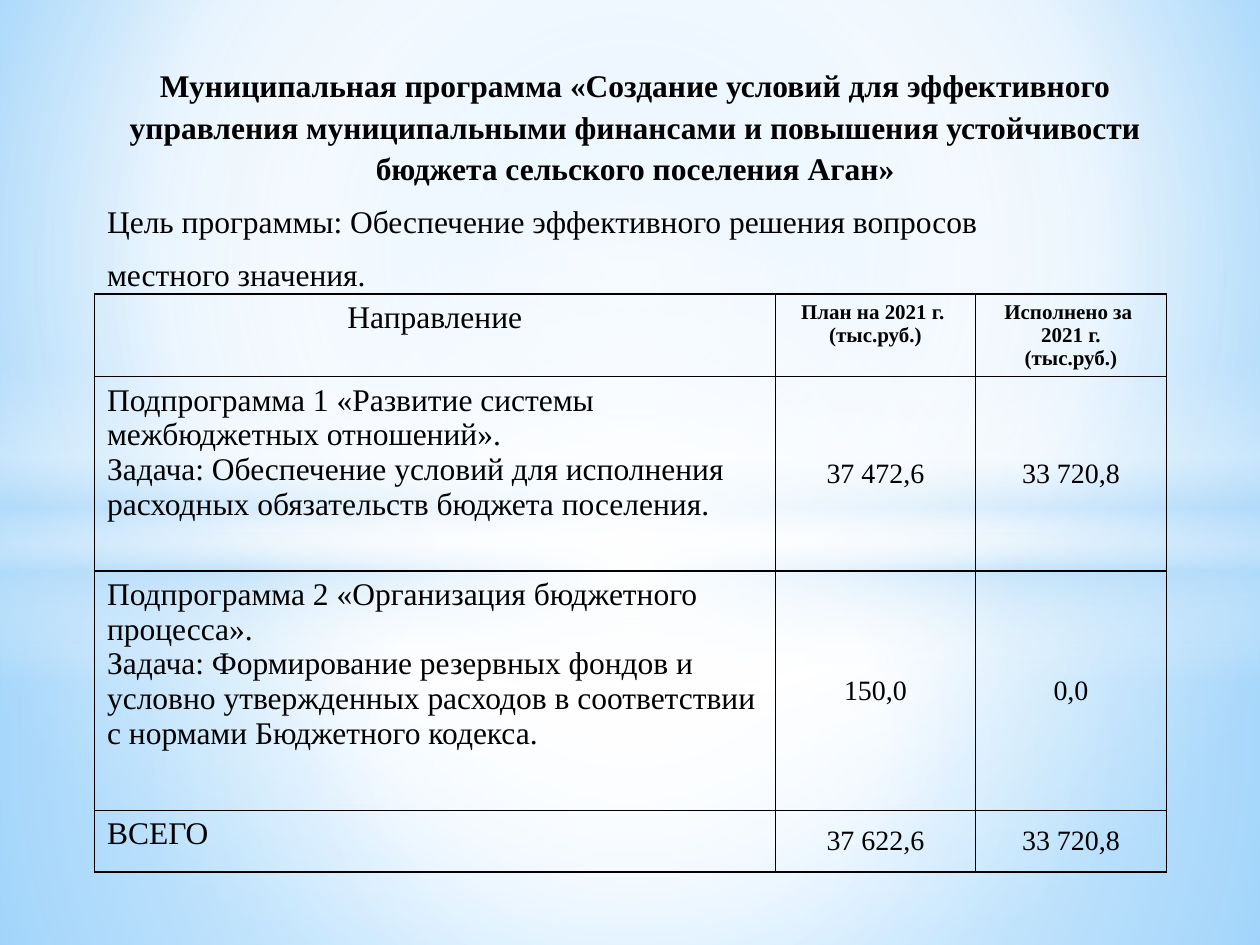
from lxml import etree
from pptx import Presentation
from pptx.dml.color import RGBColor
from pptx.enum.shapes import MSO_SHAPE
from pptx.enum.text import MSO_ANCHOR, MSO_AUTO_SIZE, PP_ALIGN
from pptx.oxml.ns import qn
from pptx.util import Pt

RECTANGLE, OVAL = MSO_SHAPE.RECTANGLE, MSO_SHAPE.OVAL
TOP, MIDDLE = MSO_ANCHOR.TOP, MSO_ANCHOR.MIDDLE
LEFT, CENTER = PP_ALIGN.LEFT, PP_ALIGN.CENTER
NO_AUTOFIT = MSO_AUTO_SIZE.NONE
TITLE_ONLY = 5

COLORS = {
    "text": "000000",
    "border": "000000",
    "white": "FFFFFF",
    "haze": "B4DCFA",
    "sky": "9ED5FF",
    "deep_sky": "5BB9FF",
}
CENTERED = (50, 50, 50, 50)

HEADING = ("Муниципальная программа «Создание условий для эффективного управления "
           "муниципальными финансами и повышения устойчивости бюджета сельского поселения Аган»")
GOAL = ["Цель программы: Обеспечение эффективного решения вопросов", "местного значения."]

COLUMN_WIDTHS = [389, 114.5, 109]
ROW_HEIGHTS = [47, 111, 137, 35]
ROWS = [
    [["Направление"],
     ["План на 2021 г. ", "(тыс.руб.)"],
     ["Исполнено за ", "2021 г.", "(тыс.руб.)"]],
    [["Подпрограмма 1 «Развитие системы межбюджетных отношений».",
      "Задача: Обеспечение условий для исполнения расходных обязательств бюджета поселения."],
     ["37 472,6"], ["33 720,8"]],
    [["Подпрограмма 2 «Организация бюджетного процесса».",
      "Задача: Формирование резервных фондов и условно утвержденных расходов "
      "в соответствии с нормами Бюджетного кодекса."],
     ["150,0"], ["0,0"]],
    [["ВСЕГО"], ["37 622,6"], ["33 720,8"]],
]


class SlideBuilder:
    font = "Times New Roman"

    def __init__(self, page):
        self.page = page

    def gradient(self, owner, stops, center=None):
        """Swap the solid fill of owner for a circular or vertical gradient."""
        solid = owner.find(qn("a:solidFill"))
        grad = etree.Element(qn("a:gradFill"), rotWithShape="1")
        stop_list = etree.SubElement(grad, qn("a:gsLst"))
        for position, color, opacity in stops:
            stop = etree.SubElement(stop_list, qn("a:gs"), pos=str(position * 1000))
            tint = etree.SubElement(stop, qn("a:srgbClr"), val=COLORS[color])
            if opacity < 100:
                etree.SubElement(tint, qn("a:alpha"), val=str(opacity * 1000))
        if center:
            circle = etree.SubElement(grad, qn("a:path"), path="circle")
            sides = {side: str(value * 1000) for side, value in zip("ltrb", center)}
            etree.SubElement(circle, qn("a:fillToRect"), sides)
        else:
            etree.SubElement(grad, qn("a:lin"), ang="5400000", scaled="0")
        owner.replace(solid, grad)

    def background(self, stops, center):
        self.page.background.fill.solid()
        self.gradient(self.page.element.find(".//" + qn("p:bgPr")), stops, center)

    def glow(self, kind, top, height, stops, center=None):
        """Add a full-width translucent shape."""
        shape = self.page.shapes.add_shape(kind, 0, Pt(top), Pt(720), Pt(height))
        shape.shadow.inherit = False
        shape.line.fill.background()
        shape.fill.solid()
        self.gradient(shape.element.spPr, stops, center)

    def add_lines(self, frame, lines, size, bold=False, **para_format):
        """Add one paragraph per line, starting with the first empty one."""
        for line in lines:
            para = frame.paragraphs[-1]
            if para.runs:
                para = frame.add_paragraph()
            for name, value in para_format.items():
                setattr(para, name, value)
            span = para.add_run()
            span.text = line
            for name, value in {"name": self.font, "size": Pt(size), "bold": bold}.items():
                setattr(span.font, name, value)
            span.font.color.rgb = RGBColor.from_string(COLORS["text"])

    def title(self, left, top, width, height, heading, details):
        box = self.page.shapes.title
        place = {"left": left, "top": top, "width": width, "height": height}
        for name, value in place.items():
            setattr(box, name, Pt(value))
        frame = box.text_frame
        frame_format = {"word_wrap": True, "auto_size": NO_AUTOFIT, "vertical_anchor": TOP}
        for name, value in frame_format.items():
            setattr(frame, name, value)
        spacing = {"space_before": Pt(3.6), "space_after": Pt(3), "line_spacing": 1.1}
        self.add_lines(frame, [heading], 18, bold=True, alignment=CENTER, **spacing)
        self.add_lines(frame, details, 18, alignment=LEFT, **spacing)
        # Bring the title in front of the glows
        box.element.getparent().append(box.element)

    def border(self, cell):
        properties = cell._tc.get_or_add_tcPr()
        for index, side in enumerate(("lnL", "lnR", "lnT", "lnB")):
            line = etree.Element(qn("a:" + side), w=str(Pt(1)))
            fill = etree.SubElement(line, qn("a:solidFill"))
            etree.SubElement(fill, qn("a:srgbClr"), val=COLORS["border"])
            properties.insert(index, line)

    def table(self, left, top, widths, heights, rows):
        table = self.page.shapes.add_table(
            len(rows), len(widths), Pt(left), Pt(top), Pt(sum(widths)), Pt(sum(heights))).table
        table.first_row = table.horz_banding = False
        for column, width in zip(table.columns, widths):
            column.width = Pt(width)
        for row, height in zip(table.rows, heights):
            row.height = Pt(height)
        for r, row in enumerate(rows):
            for c, lines in enumerate(row):
                cell = table.cell(r, c)
                header, label = r == 0, c == 0
                cell.fill.background()
                cell.vertical_anchor = TOP if header or label else MIDDLE
                size = 18 if label else 12 if header else 16
                self.add_lines(cell.text_frame, lines, size, bold=header and not label,
                               alignment=LEFT if label and not header else CENTER)
                self.border(cell)


def main():
    deck = Presentation()
    deck.slide_width, deck.slide_height = Pt(720), Pt(540)
    builder = SlideBuilder(deck.slides.add_slide(deck.slide_layouts[TITLE_ONLY]))

    # Sky background and light glows
    builder.background(
        [(0, "sky", 100), (60, "white", 100), (100, "deep_sky", 100)], (20, 10, 20, 60))
    builder.glow(RECTANGLE, 304.5, 235.5,
                 [(0, "white", 91), (37, "white", 76), (100, "haze", 79)], CENTERED)
    builder.glow(RECTANGLE, 0, 304.5,
                 [(0, "white", 89), (48, "white", 62), (100, "haze", 79)], CENTERED)
    builder.glow(RECTANGLE, 209, 180,
                 [(0, "white", 0), (29, "white", 30), (45, "haze", 40),
                  (55, "white", 26), (65, "haze", 60), (100, "white", 0)])
    builder.glow(OVAL, 126, 402, [(0, "white", 100), (54, "white", 0)], CENTERED)

    # Programme name and goal
    builder.title(54, 32, 618, 482, HEADING, GOAL)

    # Budget by subprogramme
    builder.table(54, 168, COLUMN_WIDTHS, ROW_HEIGHTS, ROWS)

    deck.save("out.pptx")


if __name__ == "__main__":
    main()
